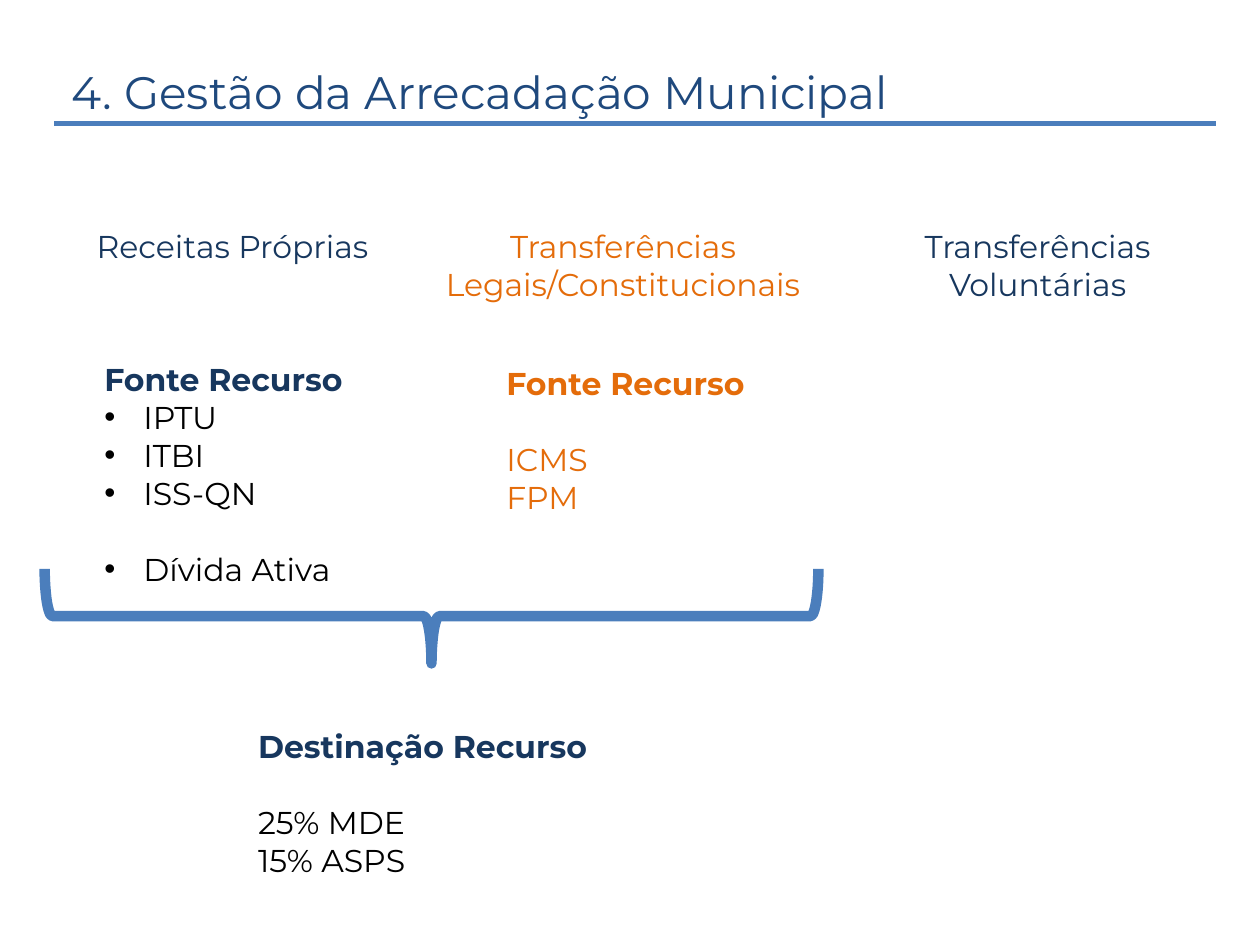
from lxml import etree
from pptx import Presentation
from pptx import util as u
from pptx.dml.color import RGBColor
from pptx.enum import shapes, text
from pptx.oxml.ns import qn

PX = u.Inches(1) // 100
NAVY = RGBColor(0x17, 0x37, 0x5E)
ORANGE = RGBColor(0xE4, 0x6C, 0x0A)
BLACK = RGBColor(0, 0, 0)
TITLE = RGBColor(0x1F, 0x49, 0x7D)
BLUE = RGBColor(0x4B, 0x7E, 0xBC)
FONT = "Montserrat"
INDENT = 31 * PX


def style(p, size, color, bold=False):
    for r in p.runs:
        r.font.name = FONT
        r.font.size = u.Pt(size)
        r.font.bold = bold
        r.font.color.rgb = color


def add_text(x, y, w, h, content):
    tf = s.shapes.add_textbox(x * PX, y * PX, w * PX, h * PX).text_frame
    tf.word_wrap = True
    tf.text = content
    return tf


prs = Presentation()
prs.slide_width, prs.slide_height = 1000 * PX, 750 * PX
s = prs.slides.add_slide(prs.slide_layouts[5])

title = s.shapes.title
title.left, title.top, title.width, title.height = 47 * PX, 46 * PX, 801 * PX, 54 * PX
tf = title.text_frame
tf.text = "4. Gestão da Arrecadação Municipal"
tf.auto_size = text.MSO_AUTO_SIZE.NONE
tf.vertical_anchor = text.MSO_ANCHOR.TOP
tf.paragraphs[0].alignment = text.PP_ALIGN.LEFT
style(tf.paragraphs[0], 26, TITLE)

rule = s.shapes.add_connector(shapes.MSO_CONNECTOR.STRAIGHT, 43 * PX, 98 * PX, 965 * PX, 98 * PX)
rule.line.color.rgb = BLUE
rule.line.width = u.Pt(3)
etree.SubElement(rule._element.spPr, qn("a:effectLst"))

for x, w, h, heading, color in [
    (35, 299, 40, "Receitas Próprias", NAVY),
    (323, 343, 71, "Transferências Legais/Constitucionais", ORANGE),
    (674, 299, 71, "Transferências Voluntárias", NAVY),
]:
    p = add_text(x, 175, w, h, heading).paragraphs[0]
    p.alignment = text.PP_ALIGN.CENTER
    style(p, 18, color)

for x, y, w, h, lines, head_color, item_color, gap_at, bulleted in [
    (73, 281, 236, 192, ["Fonte Recurso", "IPTU", "ITBI", "ISS-QN", "Dívida Ativa"], NAVY, BLACK, 4, True),
    (392, 284, 224, 131, ["Fonte Recurso", "ICMS", "FPM"], ORANGE, ORANGE, 1, False),
    (195, 572, 315, 162, ["Destinação Recurso", "25% MDE", "15% ASPS"], NAVY, BLACK, 1, False),
]:
    head, *items = paragraphs = add_text(x, y, w, h, "\n".join(lines)).paragraphs
    style(head, 18, head_color, True)
    paragraphs[gap_at].space_before = u.Pt(22)
    for p in items:
        style(p, 18, item_color)
        if bulleted:
            pPr = p._p.get_or_add_pPr()
            pPr.set("marL", str(INDENT))
            pPr.set("indent", str(-INDENT))
            etree.SubElement(pPr, qn("a:buFont")).set("typeface", "Arial")
            etree.SubElement(pPr, qn("a:buChar")).set("char", "•")

brace = s.shapes.add_shape(shapes.MSO_SHAPE.LEFT_BRACE, 305 * PX, 182 * PX, 75 * PX, 614 * PX)
brace.rotation = 270
brace.shadow.inherit = False
brace.fill.background()
brace.line.color.rgb = BLUE
brace.line.width = u.Pt(6)

prs.save("out.pptx")
